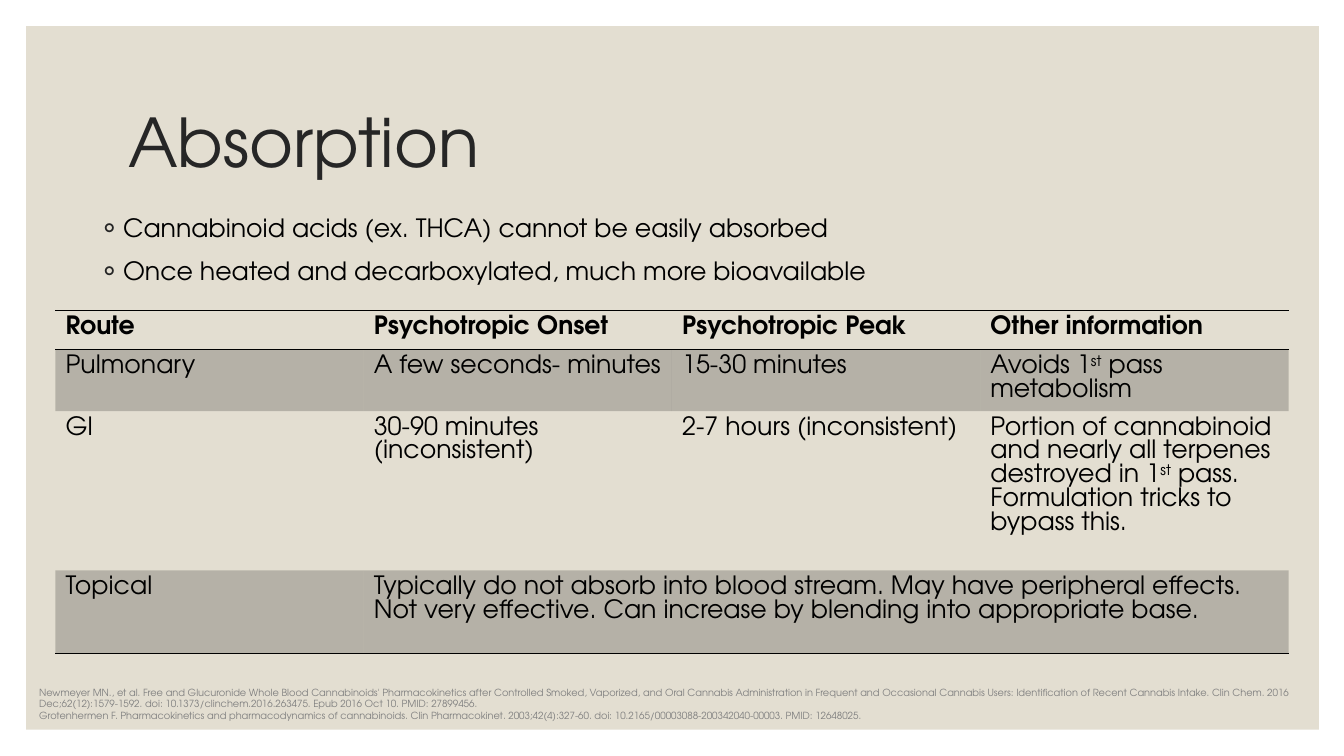
"""Builds a slide on how cannabinoids are absorbed by route."""
from dataclasses import dataclass

from lxml.etree import SubElement
from pptx import Presentation
from pptx.dml.color import RGBColor as RGB
from pptx.enum.shapes import MSO_SHAPE as Preset
from pptx.enum.text import MSO_ANCHOR as Anchor, MSO_AUTO_SIZE as AutoSize, PP_ALIGN as Align
from pptx.oxml.ns import qn
from pptx.util import Inches, Pt


@dataclass(frozen=True)
class Theme:
    """Colours, font and type sizes."""
    font: str = "TeX Gyre Adventor"
    panel: RGB = RGB(0xE3, 0xDE, 0xD1)
    heading: RGB = RGB(0x26, 0x26, 0x26)
    ink: RGB = RGB(0, 0, 0)
    muted: RGB = RGB(0x80, 0x80, 0x80)
    title_size: int = 48
    text_size: int = 18
    table_leading: int = 17
    source_size: int = 7
    band_alpha: int = 20
    plain_table: str = "{2D5ABB26-0587-4C30-8999-92F81FD0307C}"


class SlideBuilder:
    """Holds the theme and the slide being filled."""

    def __init__(self, slide, theme):
        self.slide, self.theme = slide, theme

    def place(self, shape, box):
        """Moves a shape to a box in inches."""
        shape.left, shape.top, shape.width, shape.height = map(Inches, box)

    def add_runs(self, paragraph, text, size, color, bold=False):
        """Adds runs, raising the parts between carets."""
        for position, part in enumerate(text.split("^")):
            run = paragraph.add_run()
            run.text = part
            font = run.font
            font.name, font.size, font.bold = self.theme.font, Pt(size), bold
            font.color.rgb = color
            if position % 2:
                font._element.set("baseline", "30000")

    def paragraphs(self, frame, lines):
        """Yields a paragraph with each line of text."""
        for index, line in enumerate(lines):
            yield (frame.add_paragraph() if index else frame.paragraphs[0]), line

    def panel(self, box):
        """Draws the backdrop behind all other elements."""
        backdrop = self.slide.shapes.add_shape(Preset.RECTANGLE, *map(Inches, box))
        backdrop.shadow.inherit = False
        backdrop.fill.solid()
        backdrop.fill.fore_color.rgb = self.theme.panel
        backdrop.line.fill.background()
        self.slide.shapes._spTree.insert(2, backdrop._element)

    def title(self, text, box):
        """Fills the title placeholder."""
        heading = self.slide.shapes.title
        self.place(heading, box)
        frame = heading.text_frame
        frame.auto_size, frame.vertical_anchor = AutoSize.NONE, Anchor.MIDDLE
        paragraph = frame.paragraphs[0]
        paragraph.alignment, paragraph.line_spacing = Align.LEFT, 0.9
        self.add_runs(paragraph, text, self.theme.title_size, self.theme.heading)

    def bullets(self, lines, box):
        """Fills the body placeholder with a bulleted list."""
        body = self.slide.placeholders[1]
        self.place(body, box)
        body.text_frame.auto_size = AutoSize.NONE
        for paragraph, line in self.paragraphs(body.text_frame, lines):
            paragraph.space_before = Pt(9)
            properties = paragraph._p.get_or_add_pPr()
            properties.set("marL", str(Inches(0.2)))
            properties.set("indent", str(Inches(-0.2)))
            bullet_color = SubElement(properties, qn("a:buClr"))
            SubElement(bullet_color, qn("a:srgbClr"), val=str(self.theme.heading))
            SubElement(properties, qn("a:buFont"), typeface=self.theme.font)
            SubElement(properties, qn("a:buChar"), char="◦")
            self.add_runs(paragraph, line, self.theme.text_size, self.theme.ink)

    def cell(self, cell, text, bold, banded, edges):
        """Fills and styles one table cell."""
        for paragraph, line in self.paragraphs(cell.text_frame, text.split("\n")):
            paragraph.line_spacing = Pt(self.theme.table_leading)
            self.add_runs(paragraph, line, self.theme.text_size, self.theme.ink, bold)
        self.dress(cell, banded, edges)

    def dress(self, cell, banded, edges):
        """Sets the borders and the fill of a cell."""
        properties = cell._tc.get_or_add_tcPr()
        for edge in edges:
            border = SubElement(properties, qn(f"a:ln{edge}"), w=str(Pt(1)))
            ink = SubElement(border, qn("a:solidFill"))
            SubElement(ink, qn("a:srgbClr"), val=str(self.theme.ink))
        if not banded:
            cell.fill.background()
            return
        cell.fill.solid()
        cell.fill.fore_color.rgb = self.theme.ink
        tint = properties.find(qn("a:solidFill")).find(qn("a:srgbClr"))
        SubElement(tint, qn("a:alpha"), val=str(self.theme.band_alpha * 1000))

    def table(self, rows, heights, box):
        """Adds a banded table; a short row spans its last cell."""
        columns = len(rows[0])
        table = self.slide.shapes.add_table(len(rows), columns, *map(Inches, box)).table
        table._tbl.tblPr.find(qn("a:tableStyleId")).text = self.theme.plain_table
        table.first_row = table.horz_banding = False
        for index, (texts, height) in enumerate(zip(rows, heights)):
            table.rows[index].height = Inches(height)
            edges = "TB" if index == 0 else "B" if index == len(rows) - 1 else ""
            for column, text in enumerate(texts):
                self.cell(table.cell(index, column), text, index == 0, index % 2, edges)
            for column in range(len(texts), columns):
                self.dress(table.cell(index, column), index % 2, edges)
            if len(texts) < columns:
                table.cell(index, len(texts) - 1).merge(table.cell(index, columns - 1))

    def sources(self, lines, box):
        """Adds the references at the foot."""
        frame = self.slide.shapes.add_textbox(*map(Inches, box)).text_frame
        frame.word_wrap, frame.auto_size = True, AutoSize.SHAPE_TO_FIT_TEXT
        for paragraph, line in self.paragraphs(frame, lines):
            self.add_runs(paragraph, line, self.theme.source_size, self.theme.muted)


BULLETS = [
    "Cannabinoid acids (ex. THCA) cannot be easily absorbed",
    "Once heated and decarboxylated, much more bioavailable",
]
ROUTES = [
    ["Route", "Psychotropic Onset", "Psychotropic Peak", "Other information"],
    ["Pulmonary", "A few seconds- minutes", "15-30 minutes", "Avoids 1^st^ pass metabolism"],
    ["GI", "30-90 minutes (inconsistent)", "2-7 hours (inconsistent)",
     "Portion of cannabinoid and nearly all terpenes destroyed in 1^st^ pass.\n"
     "Formulation tricks to bypass this."],
    ["Topical",
     "Typically do not absorb into blood stream. May have peripheral effects.\n"
     "Not very effective. Can increase by blending into appropriate base."],
]
SOURCES = [
    "Newmeyer MN., et al. Free and Glucuronide Whole Blood Cannabinoids' Pharmacokinetics after "
    "Controlled Smoked, Vaporized, and Oral Cannabis Administration in Frequent and Occasional "
    "Cannabis Users: Identification of Recent Cannabis Intake. Clin Chem. 2016 "
    "Dec;62(12):1579-1592. doi: 10.1373/clinchem.2016.263475. Epub 2016 Oct 10. PMID: 27899456.",
    "Grotenhermen F. Pharmacokinetics and pharmacodynamics of cannabinoids. Clin Pharmacokinet. "
    "2003;42(4):327-60. doi: 10.2165/00003088-200342040-00003. PMID: 12648025.",
]


def main():
    """Builds and saves the deck."""
    deck = Presentation()
    deck.slide_width, deck.slide_height = Inches(13.33), Inches(7.5)
    builder = SlideBuilder(deck.slides.add_slide(deck.slide_layouts[1]), Theme())
    builder.panel((0.26, 0.26, 12.82, 6.98))
    builder.title("Absorption", (1.17, 0.7, 11, 1.5))
    builder.bullets(BULLETS, (0.92, 2.06, 11.5, 4.1))
    builder.table(ROUTES, (0.39, 0.61, 1.58, 0.82), (0.55, 3.08, 12.23, 3.4))
    builder.sources(SOURCES, (0.29, 6.76, 12.76, 0.45))
    deck.save("out.pptx")


if __name__ == "__main__":
    main()
